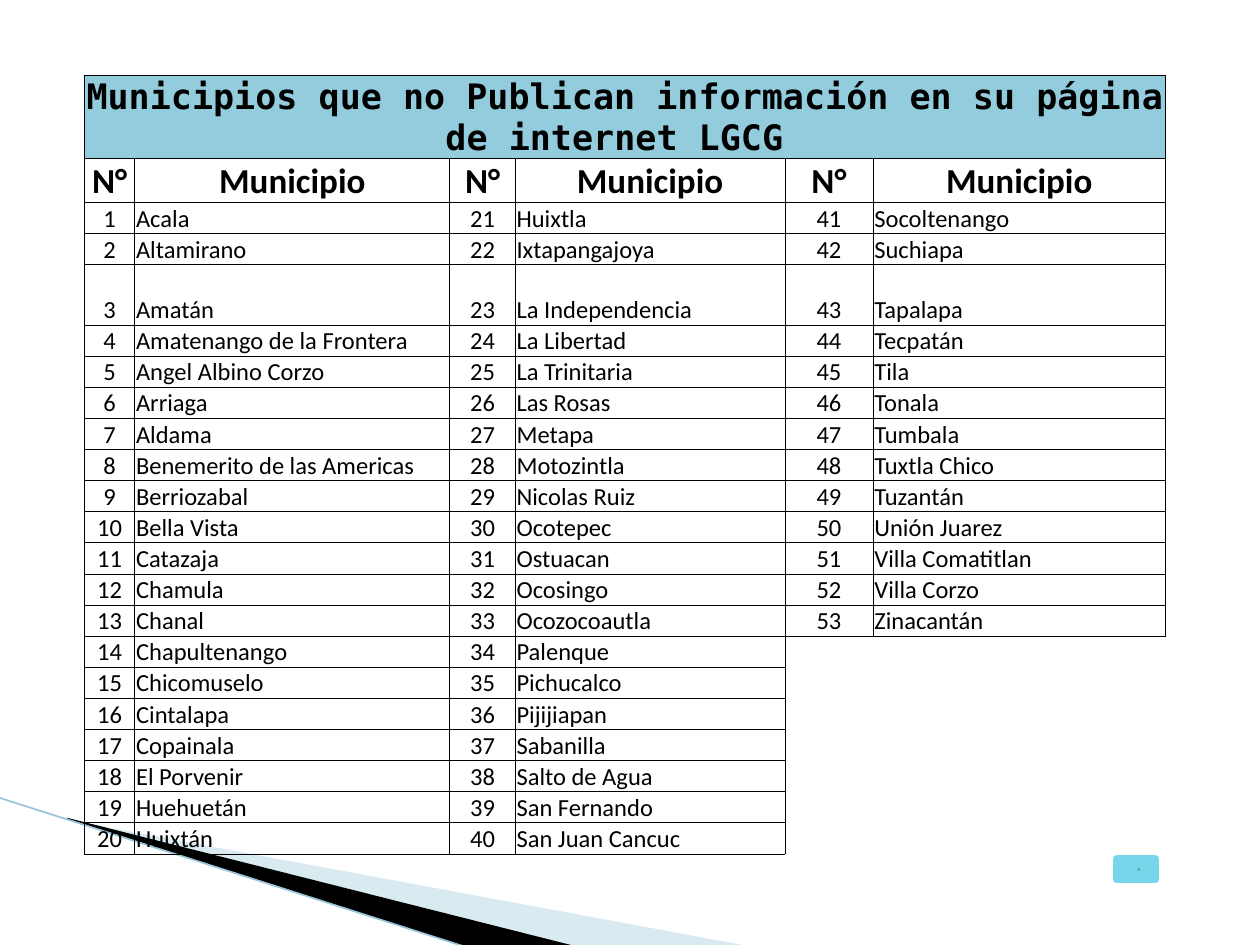
from lxml import etree
from pptx import Presentation
from pptx import util as u
from pptx.dml import color
from pptx.enum import shapes, text
from pptx.oxml import ns

COLORS = {"black": "000000", "white": "FFFFFF", "title": "93CDDD", "wave": "A0CBDC",
          "wave_line": "97C5D8", "button": "78D6EA"}
TITLE = "Municipios que no Publican información en su página de internet LGCG "
MUNICIPALITIES = [
    "Acala", "Altamirano", "Amatán", "Amatenango de la Frontera", "Angel Albino Corzo",
    "Arriaga", "Aldama", "Benemerito de las Americas", "Berriozabal", "Bella Vista",
    "Catazaja", "Chamula", "Chanal", "Chapultenango", "Chicomuselo", "Cintalapa",
    "Copainala", "El Porvenir", "Huehuetán", "Huixtán", "Huixtla", "Ixtapangajoya",
    "La Independencia", "La Libertad", "La Trinitaria", "Las Rosas", "Metapa",
    "Motozintla", "Nicolas Ruiz", "Ocotepec", "Ostuacan", "Ocosingo", "Ocozocoautla",
    "Palenque", "Pichucalco", "Pijijiapan", "Sabanilla", "Salto de Agua",
    "San Fernando", "San Juan Cancuc", "Socoltenango", "Suchiapa", "Tapalapa",
    "Tecpatán", "Tila", "Tonala", "Tumbala", "Tuxtla Chico", "Tuzantán",
    "Unión Juarez", "Villa Comatitlan", "Villa Corzo", "Zinacantán",
]
PER_COLUMN = 20
COLUMN_WIDTHS = [0.4, 2.5, 0.52, 2.14, 0.7, 1.07, 1.25]
ROW_HEIGHTS = [0.65, 0.35] + [0.24] * PER_COLUMN
ROW_HEIGHTS[4] = 0.48


def rgb(name):
    """Return the named colour."""
    return color.RGBColor.from_string(COLORS[name])


def add_element(parent, tag, **attributes):
    """Append a DrawingML element and return it."""
    return etree.SubElement(parent, ns.qn(tag), **attributes)


def write_text(cell, content, size=14, bold=False, font="Calibri", centered=False):
    """Write formatted text at the bottom of a cell."""
    cell.vertical_anchor = text.MSO_ANCHOR.BOTTOM
    paragraph = cell.text_frame.paragraphs[0]
    if centered:
        paragraph.alignment = text.PP_ALIGN.CENTER
    if not content:
        add_element(paragraph._p, "a:endParaRPr", sz=str(size * 100))
        return
    run = paragraph.add_run()
    run.text = content
    run.font.size = u.Pt(size)
    run.font.bold = bold
    run.font.name = font
    run.font.color.rgb = rgb("black")


def format_cell(cell, fill=None, sides="LRTB", width=0.5, top_width=None):
    """Set the margins, borders and fill of a cell."""
    cell.margin_left = cell.margin_right = cell.margin_top = u.Inches(0.01)
    cell.margin_bottom = 0
    properties = cell._tc.get_or_add_tcPr()
    for side in "LRTB":
        points = top_width if side == "T" and top_width else width
        border = add_element(properties, f"a:ln{side}", w=str(u.Pt(points)))
        if side in sides:
            solid = add_element(border, "a:solidFill")
            add_element(solid, "a:srgbClr", val=COLORS["black"])
        else:
            add_element(border, "a:noFill")
    if fill:
        cell.fill.solid()
        cell.fill.fore_color.rgb = rgb(fill)
    else:
        cell.fill.background()


def format_body_cell(cell, row, column, filled_rows):
    """Format a body cell, leaving the unused corner open."""
    if row < filled_rows or column < 4:
        format_cell(cell)
        return
    sides = ("L" if column == 4 else "") + ("T" if row == filled_rows else "")
    format_cell(cell, sides=sides)


def add_municipality_table(slide, left, top, width, height):
    """Add the numbered list of municipalities in three blocks."""
    table = slide.shapes.add_table(len(ROW_HEIGHTS), len(COLUMN_WIDTHS),
                                   left, top, width, height).table
    table.first_row = table.horz_banding = False
    for column, column_width in zip(table.columns, COLUMN_WIDTHS):
        column.width = u.Inches(column_width)
    for row, row_height in zip(table.rows, ROW_HEIGHTS):
        row.height = u.Inches(row_height)

    filled_rows = len(MUNICIPALITIES) - 2 * PER_COLUMN
    for column in range(len(COLUMN_WIDTHS)):
        format_cell(table.cell(0, column), fill="title", width=1)
        format_cell(table.cell(1, column), fill="white", top_width=1)
        for row in range(PER_COLUMN):
            format_body_cell(table.cell(row + 2, column), row, column, filled_rows)
    table.cell(0, 0).merge(table.cell(0, 6))
    for row in range(1, filled_rows + 2):
        table.cell(row, 5).merge(table.cell(row, 6))

    write_text(table.cell(0, 0), TITLE, size=20, bold=True,
               font="DejaVu Sans Mono", centered=True)
    for block in range(3):
        for offset, heading in enumerate(("N°", "Municipio")):
            write_text(table.cell(1, 2 * block + offset), heading,
                       size=20, bold=True, centered=True)
    for index, name in enumerate(MUNICIPALITIES):
        block, row = divmod(index, PER_COLUMN)
        write_text(table.cell(row + 2, 2 * block), str(index + 1), centered=True)
        write_text(table.cell(row + 2, 2 * block + 1), name)
    for row in range(filled_rows + 2, len(ROW_HEIGHTS)):
        for column in range(4, 7):
            write_text(table.cell(row, column), "")


def add_band(slide, left, top, points, fill, opacity=None):
    """Add a filled outline whose points are relative to its corner."""
    corners = [(left + u.Inches(x), top + u.Inches(y)) for x, y in points]
    builder = slide.shapes.build_freeform(*corners[0])
    builder.add_line_segments(corners[1:])
    band = builder.convert_to_shape()
    band.shadow.inherit = False
    band.fill.solid()
    band.fill.fore_color.rgb = rgb(fill)
    band.line.fill.background()
    if opacity:
        solid = band.fill._xPr.find(ns.qn("a:solidFill"))
        add_element(solid[0], "a:alpha", val=str(opacity * 1000))


def add_wave(slide, left, top, width, height):
    """Add the decorative bands and edge line in the lower left corner."""
    add_band(slide, left, top, [(0.56, 0.18), (5.96, 1.18), (4.57, 1.18), (0.56, 0.17)],
             "wave", opacity=40)
    add_band(slide, left, top, [(0.54, 0.16), (4.58, 1.18), (3.73, 1.19), (0.55, 0.17)],
             "black")
    edge = slide.shapes.add_connector(shapes.MSO_CONNECTOR.STRAIGHT,
                                      left, top, left + width, top + height)
    edge.line.color.rgb = rgb("wave_line")
    edge.line.width = u.Pt(0.95)
    add_element(edge._element.spPr, "a:effectLst")


def add_back_button(slide, left, top, width, height):
    """Add the button that points to the previous slide."""
    button = slide.shapes.add_shape(shapes.MSO_SHAPE.ACTION_BUTTON_BACK_OR_PREVIOUS,
                                    left, top, width, height)
    button.shadow.inherit = False
    button.fill.solid()
    button.fill.fore_color.rgb = rgb("button")
    button.line.color.rgb = rgb("button")
    button.line.width = u.Pt(4.33)
    add_element(button.line._get_or_add_ln(), "a:round")


def main():
    """Build the slide and save it."""
    presentation = Presentation()
    presentation.slide_width = u.Inches(10)
    presentation.slide_height = u.Inches(7.5)
    slide = presentation.slides.add_slide(presentation.slide_layouts[6])
    add_wave(slide, u.Inches(-0.01), u.Inches(6.33), u.Inches(3.72), u.Inches(1.19))
    add_municipality_table(slide, u.Inches(0.67), u.Inches(0.6),
                           u.Inches(8.58), u.Inches(6.08))
    add_back_button(slide, u.Inches(8.86), u.Inches(6.82), u.Inches(0.31), u.Inches(0.16))
    presentation.save("out.pptx")


if __name__ == "__main__":
    main()
